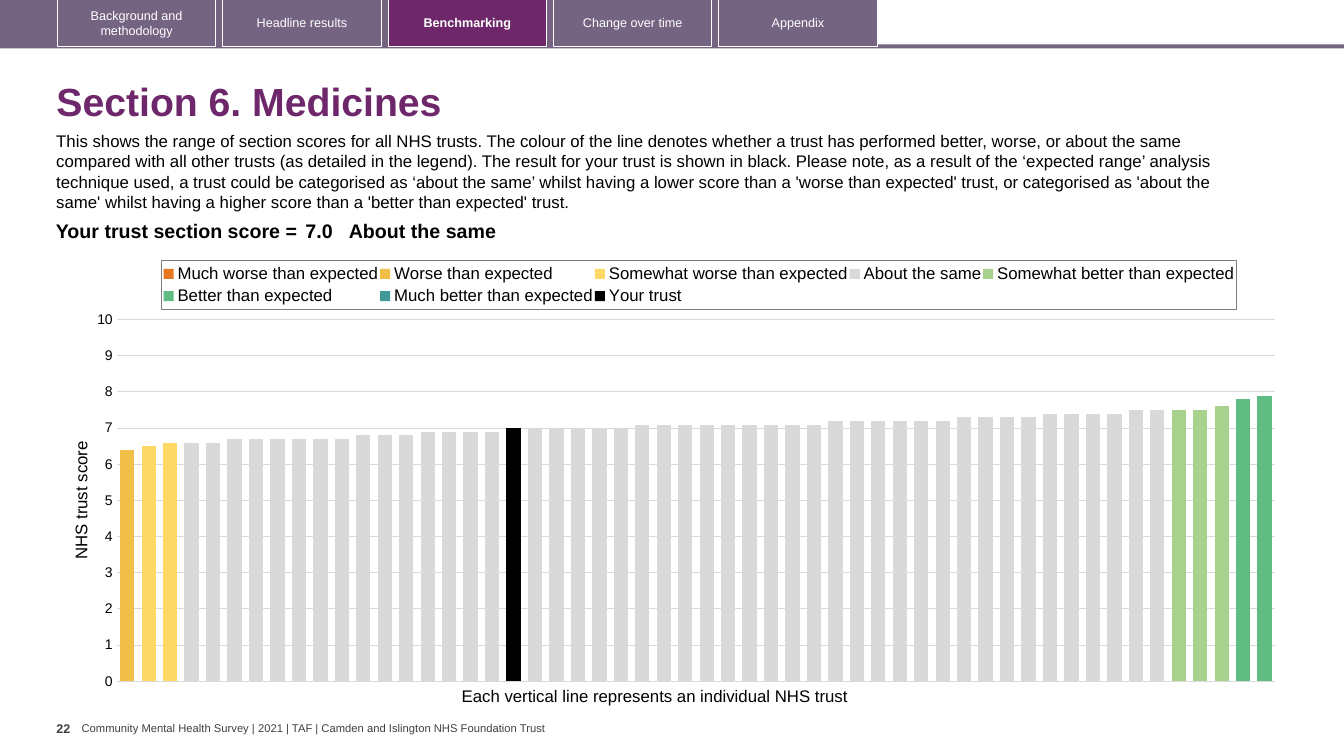
from copy import deepcopy
from pptx import Presentation, oxml
from pptx import util as u
from pptx.chart import axis as axes, data
from pptx.dml import color
from pptx.enum import chart as charts, shapes, text
from pptx.oxml import ns

HUES = {
    "bar": "756382", "plum": "6D276A", "white": "FFFFFF", "black": "000000",
    "foot": "404040", "grid": "D9D9D9", "frame": "7F7F7F",
    "much worse": "E87722", "worse": "F1BE48", "some worse": "FFD966",
    "same": "D9D9D9", "some better": "A9D18E", "better": "5FBD83", "much better": "419999",
}
TABS = ["Background and methodology", "Headline results", "Benchmarking",
        "Change over time", "Appendix"]
INTRO = (
    "This shows the range of section scores for all NHS trusts. The colour of the line "
    "denotes whether a trust has performed better, worse, or about the same compared with "
    "all other trusts (as detailed in the legend). The result for your trust is shown in "
    "black. Please note, as a result of the ‘expected range’ analysis technique used, a "
    "trust could be categorised as ‘about the same’ whilst having a lower score than a "
    "'worse than expected' trust, or categorised as 'about the same' whilst having a higher "
    "score than a 'better than expected' trust.")
FOOT = "Community Mental Health Survey | 2021 | TAF | Camden and Islington NHS Foundation Trust"
TRUSTS = 54
# name, hue, index of first trust, (score, number of trusts) in order
BANDS = [
    ("Much worse than expected", "much worse", 0, []),
    ("Worse than expected", "worse", 0, [(6.4, 1)]),
    ("Somewhat worse than expected", "some worse", 1, [(6.5, 1), (6.6, 1)]),
    ("About the same", "same", 3, [(6.6, 2), (6.7, 6), (6.8, 3), (6.9, 4), (7, 6), (7.1, 9),
                                   (7.2, 6), (7.3, 4), (7.4, 4), (7.5, 2)]),
    ("Somewhat better than expected", "some better", 49, [(7.5, 2), (7.6, 1)]),
    ("Better than expected", "better", 52, [(7.8, 1), (7.9, 1)]),
    ("Much better than expected", "much better", 0, []),
    ("Your trust", "black", 18, [(7, 1)]),
]
TICK = charts.XL_TICK_MARK
MID = text.MSO_ANCHOR.MIDDLE


def rgb(hue):
    return color.RGBColor.from_string(HUES[hue])


def apply(item, **vals):
    for key, val in vals.items():
        setattr(item, key, val)


def style(font, size, hue="black", bold=False, name="Arial"):
    apply(font, size=u.Pt(size), bold=bold, name=name)
    font.color.rgb = rgb(hue)


def write(frame, words, size, hue="black", bold=False, align=None, **vals):
    apply(frame, **vals)
    para = frame.paragraphs[0]
    apply(para, text=words, alignment=align)
    style(para.runs[0].font, size, hue, bold)


def paint(fill, hue):
    if hue:
        fill.solid()
        fill.fore_color.rgb = rgb(hue)
    else:
        fill.background()


def block(slide, box, fill=None, line=None):
    rect = slide.shapes.add_shape(shapes.MSO_SHAPE.RECTANGLE, *map(u.Inches, box))
    rect.shadow.inherit = False
    rect.line.width = u.Pt(0.75)
    paint(rect.fill, fill)
    paint(rect.line.fill, line)
    return rect


def label(slide, box, words, size, **vals):
    note = slide.shapes.add_textbox(*map(u.Inches, box))
    write(note.text_frame, words, size, **vals)


def add_tabs(slide, box, live):
    left, top, width, height = box
    block(slide, (left, 0.44, width, 0.04), "bar")
    block(slide, (left, top, 8.73, height), "bar")
    for i, name in enumerate(TABS):
        on = name == live
        tab = block(slide, (left + 0.6 + 1.64 * i, top - 0.01, 1.57, height),
                    "plum" if on else None, "white")
        write(tab.text_frame, name, 9, "white", on, text.PP_ALIGN.CENTER,
              word_wrap=True, vertical_anchor=MID)


def add_head(slide, box, words):
    title = slide.shapes.title
    apply(title, **dict(zip(("left", "top", "width", "height"), map(u.Inches, box))))
    write(title.text_frame, words, 28, "plum", True, text.PP_ALIGN.LEFT, vertical_anchor=MID)
    title.text_frame.paragraphs[0].line_spacing = 0.9


def add_score(slide, box):
    table = slide.shapes.add_table(1, 3, *map(u.Inches, box)).table
    apply(table, first_row=False, horz_banding=False)
    cols = [("Your trust section score =", 2.63, 0.04, text.PP_ALIGN.RIGHT),
            ("7.0", 0.47, 0.04, None), ("About the same", 8.59, 0, None)]
    for i, (words, width, pad, align) in enumerate(cols):
        table.columns[i].width = u.Inches(width)
        cell = table.cell(0, i)
        paint(cell.fill, None)
        side, edge = u.Inches(pad), u.Inches(0.04)
        apply(cell, margin_left=side, margin_right=side, margin_top=edge, margin_bottom=edge)
        write(cell.text_frame, words, 14, bold=True, align=align)


def arrange(part, spot, box, inner=""):
    """Give a chart part a manual layout, as fractions of the chart."""
    for old in part.findall(ns.qn("c:layout")):
        part.remove(old)
    sizes = "".join(f'<c:{tag} val="{val}"/>' for tag, val in zip("xywh", box))
    part.insert(spot, oxml.parse_xml(
        f'<c:layout {ns.nsdecls("c")}><c:manualLayout>{inner}<c:xMode val="edge"/>'
        f'<c:yMode val="edge"/>{sizes}</c:manualLayout></c:layout>'))


def add_legend(chart):
    chart.has_legend = True
    apply(chart.legend, position=charts.XL_LEGEND_POSITION.TOP, include_in_layout=False)
    style(chart.legend.font, 12)
    part = chart._chartSpace.chart.find(ns.qn("c:legend"))
    arrange(part, 1, (0.077, 0.026, 0.877, 0.109))
    part.find(ns.qn("c:overlay")).addnext(oxml.parse_xml(
        f'<c:spPr {ns.nsdecls("c", "a")}><a:ln w="9525"><a:solidFill>'
        f'<a:srgbClr val="{HUES["frame"]}"/></a:solidFill></a:ln></c:spPr>'))


def add_axes(chart):
    chart.category_axis.visible = False
    axis = chart.value_axis
    apply(axis, minimum_scale=0, maximum_scale=10, major_unit=1, has_major_gridlines=True,
          major_tick_mark=TICK.NONE, minor_tick_mark=TICK.NONE)
    apply(axis.tick_labels, number_format="0", number_format_is_linked=False)
    style(axis.tick_labels.font, 10)
    paint(axis.format.line.fill, None)
    grid = axis.major_gridlines.format.line
    grid.color.rgb = rgb("grid")
    grid.width = u.Pt(0.75)
    write(axis.axis_title.text_frame, "NHS trust score", 12)


def add_right(area):
    """Move the last series to its own bars on an unlabelled right axis."""
    bars, cats, vals = (area.find(ns.qn("c:" + tag)) for tag in ("barChart", "catAx", "valAx"))
    twins = [deepcopy(part) for part in (bars, cats, vals)]
    for old, new in zip((bars, vals, vals), twins):
        old.addnext(new)
    bars.remove(bars.findall(ns.qn("c:ser"))[-1])
    for ser in twins[0].findall(ns.qn("c:ser"))[:-1]:
        twins[0].remove(ser)
    old_ids = [part.find(ns.qn("c:axId")).get("val") for part in (cats, vals)]
    swap = dict(zip(old_ids, ("5001", "5002")))
    for twin in twins:
        for ref in twin.iter(ns.qn("c:axId"), ns.qn("c:crossAx")):
            ref.set("val", swap[ref.get("val")])
    for tag, val in (("axPos", "r"), ("crosses", "max")):
        twins[2].find(ns.qn("c:" + tag)).set("val", val)
    right = axes.ValueAxis(twins[2])
    apply(right, has_major_gridlines=False, has_title=False, major_tick_mark=TICK.OUTSIDE,
          tick_label_position=charts.XL_TICK_LABEL_POSITION.NONE)


def add_bars(slide, box):
    scores = data.CategoryChartData(number_format="0.0")
    scores.categories = [str(i + 1) for i in range(TRUSTS)]
    for name, _, start, runs in BANDS:
        vals = [None] * start + [val for val, count in runs for _ in range(count)]
        scores.add_series(name, vals + [None] * (TRUSTS - len(vals)))
    kind = charts.XL_CHART_TYPE.COLUMN_CLUSTERED
    chart = slide.shapes.add_chart(kind, *map(u.Inches, box), scores).chart
    chart.has_title = False
    style(chart.font, 10, name="Calibri")
    apply(chart.plots[0], gap_width=50, overlap=100, vary_by_categories=False)
    for bars, band in zip(chart.plots[0].series, BANDS):
        bars.invert_if_negative = False
        paint(bars.format.fill, band[1])
    add_axes(chart)
    add_legend(chart)
    area = chart._chartSpace.chart.plotArea
    add_right(area)
    arrange(area, 0, (0.04, 0.158, 0.946, 0.808), '<c:layoutTarget val="inner"/>')


def add_foot(slide, box):
    left, top, width, height = box
    flat = {"hue": "foot", "word_wrap": False, "margin_left": 0, "margin_right": 0}
    label(slide, (left, top, 0.25, height), "22", 9, bold=True, **flat)
    label(slide, (left + 0.25, top + 0.06, width - 0.25, 0.13), FOOT, 8,
          vertical_anchor=MID, margin_top=0, margin_bottom=0, **flat)


deck = Presentation()
apply(deck, slide_width=u.Inches(13.33), slide_height=u.Inches(7.5))
page = deck.slides.add_slide(deck.slide_layouts[5])
add_tabs(page, (-0.03, 0, 13.36, 0.47), "Benchmarking")
add_head(page, (0.46, 0.67, 12.49, 0.72), "Section 6. Medicines")
label(page, (0.46, 1.25, 12.13, 0.91), INTRO, 12, word_wrap=True)
add_score(page, (0.36, 2.15, 11.7, 0.22))
add_bars(page, (0.67, 2.47, 12.15, 4.44))
label(page, (4.48, 6.75, 4.11, 0.3), "Each vertical line represents an individual NHS trust", 12,
      word_wrap=False)
add_foot(page, (0.56, 7.1, 4.92, 0.4))
deck.save("out.pptx")
